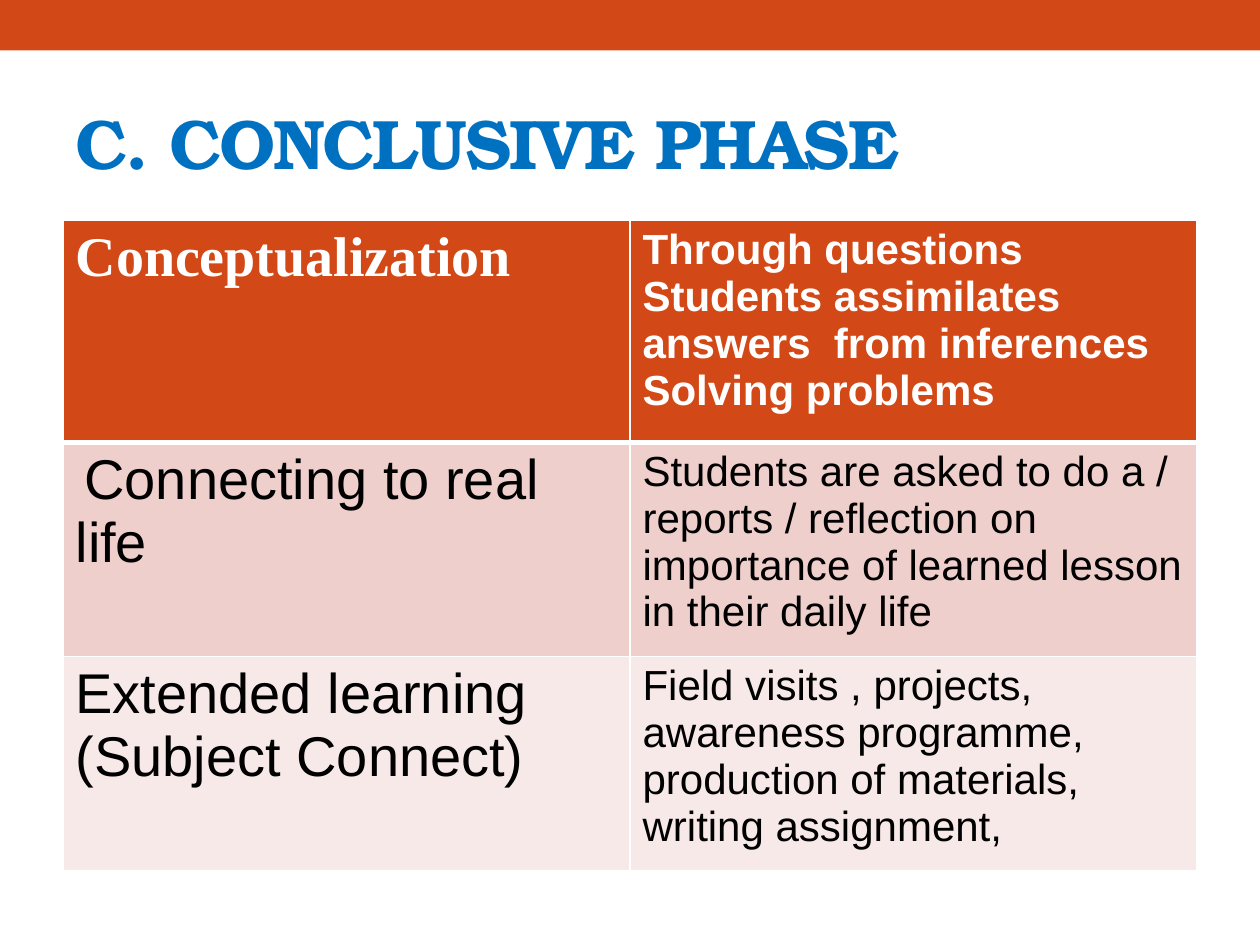
from lxml import etree
from pptx import Presentation
from pptx.dml import color
from pptx.enum import shapes, text
from pptx.oxml import ns
from pptx.util import Pt

RUST, WHITE, BLACK, BLUE = "D34817", "FFFFFF", "000000", "0070C0"
HEAD = {"name": "Arial", "size": Pt(24), "bold": True, "color": WHITE}
TOPIC = {"name": "Arial", "size": Pt(32), "bold": False, "color": BLACK}
BODY = {**TOPIC, "size": Pt(24)}
ROWS = [
    (126.7, RUST,
     [[("Conceptualization", {**HEAD, "name": "Times New Roman", "size": Pt(32)})]],
     [[("Through questions", HEAD)],
      [("Students assimilates answers  from inferences", HEAD)],
      [("Solving problems", HEAD)]]),
    (113, "EFCFCC",
     [[(" ", {**TOPIC, "size": Pt(18)}), ("Connecting to real life", TOPIC)]],
     [[("Students are asked to do a / reports / reflection on  importance of "
        "learned lesson in their daily life", BODY)]]),
    (121, "F7E9E8",
     [[("Extended learning (Subject Connect)", TOPIC)]],
     [[("Field visits , projects, awareness programme, production of materials, "
        "writing assignment,", BODY)]]),
]


def rgb(code):
    return color.RGBColor.from_string(code)


class Deck:
    def __init__(self, wide, high):
        self.prs = Presentation()
        self.prs.slide_width, self.prs.slide_height = Pt(wide), Pt(high)
        self.slide = self.prs.slides.add_slide(self.prs.slide_layouts[6])

    def paint(self, item, code):
        item.fill.solid()
        item.fill.fore_color.rgb = rgb(code)

    def put(self, frame, paras):
        """Fill a frame with paragraphs, each a list of (words, format) runs."""
        for i, runs in enumerate(paras):
            para = frame.add_paragraph() if i else frame.paragraphs[0]
            for words, form in runs:
                run = para.add_run()
                run.text = words
                for key, val in form.items():
                    if key == "color":
                        run.font.color.rgb = rgb(val)
                    elif key == "spacing":
                        run._r.get_or_add_rPr().set("spc", str(val))
                    else:
                        setattr(run.font, key, val)

    def bar(self, box, code):
        bar = self.slide.shapes.add_shape(shapes.MSO_SHAPE.RECTANGLE, *map(Pt, box))
        bar.shadow.inherit = False
        self.paint(bar, code)
        bar.line.fill.background()

    def title(self, box, words, form):
        frame = self.slide.shapes.add_textbox(*map(Pt, box)).text_frame
        frame.word_wrap = True
        frame.vertical_anchor = text.MSO_ANCHOR.MIDDLE
        self.put(frame, [[(words, form)]])

    def edge(self, cell, widths):
        """Draw white borders; widths are in points, in the order L, R, T, B."""
        props = cell._tc.get_or_add_tcPr()
        for i, (side, width) in enumerate(zip("LRTB", widths)):
            line = etree.Element(ns.qn(f"a:ln{side}"), w=str(Pt(width)))
            fill = etree.SubElement(line, ns.qn("a:solidFill"))
            etree.SubElement(fill, ns.qn("a:srgbClr"), val=WHITE)
            props.insert(i, line)

    def table(self, left, top, wide, rows):
        high = sum(row[0] for row in rows)
        grid = self.slide.shapes.add_table(
            len(rows), 2, *map(Pt, (left, top, wide, high))).table
        grid.first_row = grid.horz_banding = False
        for r, (tall, code, *cells) in enumerate(rows):
            grid.rows[r].height = Pt(tall)
            for c, paras in enumerate(cells):
                cell = grid.cell(r, c)
                self.paint(cell, code)
                self.edge(cell, (1, 1, 3 if r == 1 else 1, 3 if r == 0 else 1))
                self.put(cell.text_frame, paras)


def main():
    deck = Deck(720, 540)
    deck.bar((0, 0, 720, 28.8), RUST)
    deck.title((36, 42, 648, 78), "C. CONCLUSIVE PHASE",
               {"name": "TeX Gyre Bonum", "size": Pt(40), "bold": True,
                "color": BLUE, "spacing": -100})
    deck.table(36, 126, 648, ROWS)
    deck.prs.save("out.pptx")


if __name__ == "__main__":
    main()
